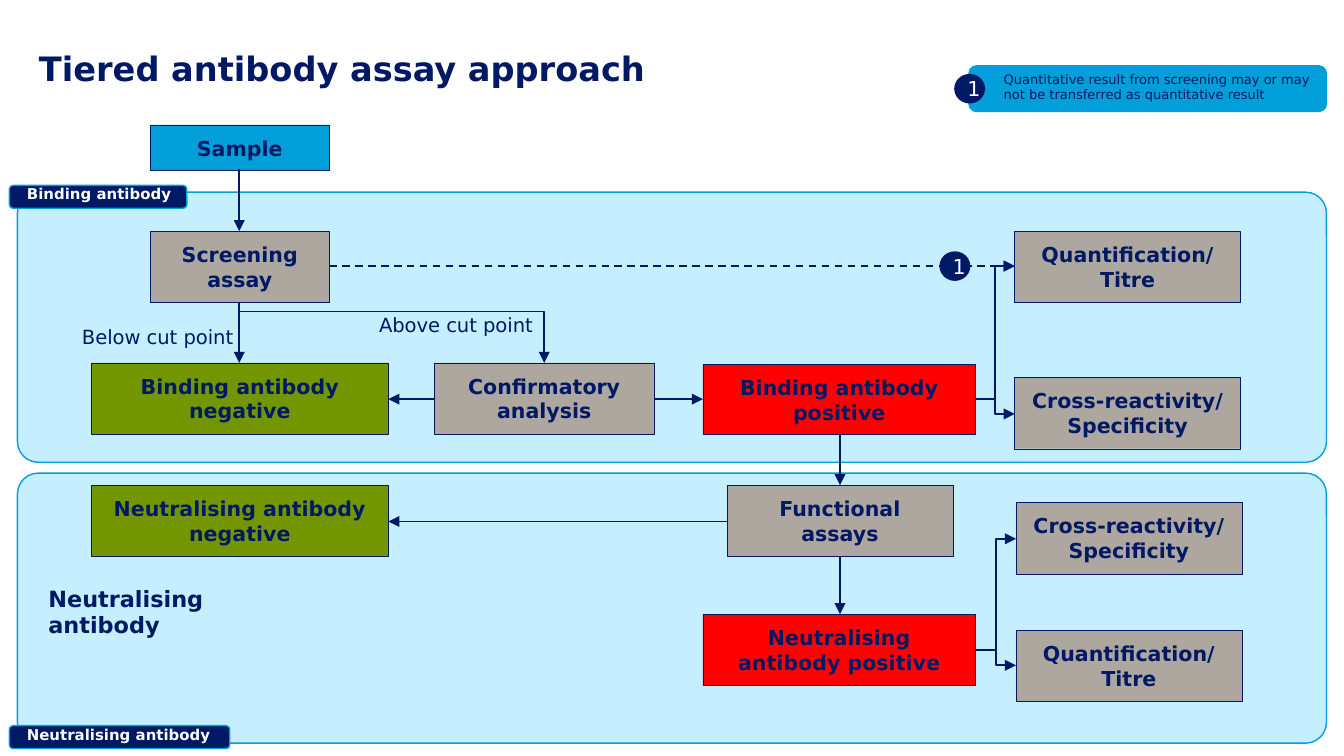
from dataclasses import dataclass

import pptx
import pptx.dml.color
import pptx.enum.dml
import pptx.enum.shapes
import pptx.enum.text
import pptx.oxml
import pptx.oxml.ns
import pptx.util
from pptx.util import Inches

SHAPE = pptx.enum.shapes.MSO_SHAPE
ALIGN = pptx.enum.text.PP_ALIGN
ANCHOR = pptx.enum.text.MSO_ANCHOR


@dataclass(frozen=True)
class Theme:
    font: str = "DejaVu Sans"
    navy: str = "001965"
    blue: str = "009FDA"
    pale: str = "C5EFFF"
    grey: str = "AEA79F"
    green: str = "739600"
    red: str = "FF0000"
    white: str = "FFFFFF"
    title: float = 18
    heading: float = 12
    box: float = 11
    label: float = 10.5
    tag: float = 8
    note: float = 7


THEME = Theme()
BOX_HEIGHT = 0.53
SIDE_WIDTH = 1.68
POSITIVE_WIDTH = 2.03

# text, left, top, width, height, fill
BOXES = [
    ("Sample", 1.12, 0.93, 1.33, 0.34, THEME.blue),
    ("Screening\nassay", 1.12, 1.72, 1.33, BOX_HEIGHT, THEME.grey),
    ("Binding antibody negative", 0.68, 2.7, 2.21, BOX_HEIGHT, THEME.green),
    ("Confirmatory\nanalysis", 3.23, 2.7, 1.64, BOX_HEIGHT, THEME.grey),
    ("Binding antibody positive", 5.23, 2.71, POSITIVE_WIDTH, 0.52, THEME.red),
    ("Quantification/\vTitre", 7.55, 1.72, SIDE_WIDTH, BOX_HEIGHT, THEME.grey),
    ("Cross-reactivity/\nSpecificity", 7.55, 2.81, SIDE_WIDTH, BOX_HEIGHT, THEME.grey),
    ("Neutralising antibody negative", 0.68, 3.61, 2.21, BOX_HEIGHT, THEME.green),
    ("Functional\vassays", 5.41, 3.61, SIDE_WIDTH, BOX_HEIGHT, THEME.grey),
    ("Neutralising antibody positive", 5.23, 4.57, POSITIVE_WIDTH, BOX_HEIGHT, THEME.red),
    ("Cross-reactivity/\nSpecificity", 7.56, 3.74, SIDE_WIDTH, BOX_HEIGHT, THEME.grey),
    ("Quantification/\vTitre", 7.56, 4.69, SIDE_WIDTH, BOX_HEIGHT, THEME.grey),
]

STRAIGHT_ARROWS = [
    (1.78, 1.26, 1.78, 1.72),
    (1.78, 2.25, 1.78, 2.7),
    (3.23, 2.97, 2.89, 2.97),
    (4.87, 2.97, 5.23, 2.97),
    (6.25, 3.23, 6.25, 3.61),
    (6.25, 4.14, 6.25, 4.57),
    (5.41, 3.88, 2.89, 3.88),
]

ELBOW_ARROWS = [
    (7.26, 2.97, 7.55, 3.08),
    (7.26, 2.97, 7.55, 1.98),
    (7.26, 4.84, 7.56, 4.01),
    (7.26, 4.84, 7.56, 4.95),
]


def rgb(value):
    return pptx.dml.color.RGBColor.from_string(value)


def write(shape, text, size, color=THEME.navy, bold=False, align=ALIGN.LEFT,
          anchor=ANCHOR.TOP, inset=None, grow=False):
    frame = shape.text_frame
    frame.word_wrap = True
    frame.vertical_anchor = anchor
    if inset is not None:
        frame.margin_left = frame.margin_right = Inches(inset)
        frame.margin_top = frame.margin_bottom = Inches(inset)
    if grow:
        frame.auto_size = pptx.enum.text.MSO_AUTO_SIZE.SHAPE_TO_FIT_TEXT
    frame.text = text
    for para in frame.paragraphs:
        para.alignment = align
        for span in para.runs:
            span.font.name = THEME.font
            span.font.size = pptx.util.Pt(size)
            span.font.bold = bold
            span.font.color.rgb = rgb(color)


def add_shape(shapes, kind, bounds, fill, line=None, width=0.75, radius=None):
    shape = shapes.add_shape(kind, *map(Inches, bounds))
    shape.shadow.inherit = False
    shape.fill.solid()
    shape.fill.fore_color.rgb = rgb(fill)
    if line:
        shape.line.color.rgb = rgb(line)
        shape.line.width = pptx.util.Pt(width)
    else:
        shape.line.fill.background()
    if radius is not None:
        shape.adjustments[0] = radius
    return shape


def add_label(shapes, text, bounds, size, inset=0.08, **style):
    box = shapes.add_textbox(*map(Inches, bounds))
    write(box, text, size, inset=inset, grow=True, **style)


def add_box(shapes, text, left, top, width, height, fill):
    box = add_shape(shapes, SHAPE.RECTANGLE, (left, top, width, height), fill, THEME.navy, 0.25)
    write(box, text, THEME.box, bold=True, align=ALIGN.CENTER, inset=0.08, grow=True)


def add_marker(shapes, left, top):
    marker = add_shape(shapes, SHAPE.OVAL, (left, top, 0.23, 0.22), THEME.navy)
    write(marker, "1", THEME.box, THEME.white, align=ALIGN.CENTER, anchor=ANCHOR.MIDDLE)


def add_arrow(shapes, points, elbow=False, dashed=False):
    kinds = pptx.enum.shapes.MSO_CONNECTOR
    arrow = shapes.add_connector(kinds.ELBOW if elbow else kinds.STRAIGHT, *map(Inches, points))
    arrow.line.color.rgb = rgb(THEME.navy)
    arrow.line.width = pptx.util.Pt(1)
    if dashed:
        arrow.line.dash_style = pptx.enum.dml.MSO_LINE.DASH
    properties = arrow._element.spPr
    tail = pptx.oxml.parse_xml(f'<a:tailEnd {pptx.oxml.ns.nsdecls("a")} type="triangle"/>')
    properties.find(pptx.oxml.ns.qn("a:ln")).append(tail)
    properties.append(pptx.oxml.parse_xml(f'<a:effectLst {pptx.oxml.ns.nsdecls("a")}/>'))
    return arrow


def add_drop_arrow(shapes, left, top, right, bottom, bend):
    """Elbow that leaves downwards, runs right and ends downwards."""
    center_x, center_y = (left + right) / 2, (top + bottom) / 2
    half_x, half_y = (right - left) / 2, (bottom - top) / 2
    arrow = add_arrow(shapes, (center_x + half_y, center_y - half_x,
                               center_x - half_y, center_y + half_x), elbow=True)
    properties = arrow._element.spPr
    properties.find(pptx.oxml.ns.qn("a:xfrm")).set("rot", str(270 * 60000))
    guides = properties.find(pptx.oxml.ns.qn("a:prstGeom")).get_or_add_avLst()
    guides.append(pptx.oxml.parse_xml(
        f'<a:gd {pptx.oxml.ns.nsdecls("a")} name="adj1" fmla="val {round(bend * 100000)}"/>'))


def add_tag(slide, text, top, width):
    shapes = slide.shapes.add_group_shape().shapes
    add_shape(shapes, SHAPE.ROUNDED_RECTANGLE, (0.07, top, width, 0.17), THEME.navy, THEME.blue)
    add_label(shapes, text, (0.12, top - 0.07, width - 0.04, 0.29), THEME.tag,
              color=THEME.white, bold=True)


def add_note(slide):
    shapes = slide.shapes.add_group_shape().shapes
    add_shape(shapes, SHAPE.ROUNDED_RECTANGLE, (7.21, 0.49, 2.66, 0.34), THEME.blue, THEME.blue)
    add_label(shapes, "Quantitative result from screening may or may not be transferred "
              "as quantitative result", (7.37, 0.48, 2.5, 0.34), THEME.note, inset=None)
    add_marker(shapes, 7.1, 0.55)


def add_title(slide, text):
    title = slide.shapes.title
    title.left, title.top, title.width, title.height = map(Inches, (0.29, 0.28, 7.31, 0.45))
    write(title, text, THEME.title, bold=True, anchor=ANCHOR.MIDDLE, inset=0)


def main():
    deck = pptx.Presentation()
    deck.slide_width = Inches(10)
    deck.slide_height = deck.slide_width * 9 // 16
    slide = deck.slides.add_slide(deck.slide_layouts[5])
    shapes = slide.shapes
    add_title(slide, "Tiered antibody assay approach")
    for top in (3.52, 1.43):
        add_shape(shapes, SHAPE.ROUNDED_RECTANGLE, (0.13, top, 9.74, 2.01),
                  THEME.pale, THEME.blue, radius=0.077)
    for box in BOXES:
        add_box(shapes, *box)
    add_label(shapes, "Above cut point", (2.74, 2.25, 1.31, 0.34), THEME.label)
    add_label(shapes, "Below cut point", (0.53, 2.34, 1.31, 0.34), THEME.label)
    add_label(shapes, "Neutralising antibody", (0.28, 4.27, 1.58, 0.55), THEME.heading, bold=True)
    for points in STRAIGHT_ARROWS:
        add_arrow(shapes, points)
    for points in ELBOW_ARROWS:
        add_arrow(shapes, points, elbow=True)
    add_drop_arrow(shapes, 1.78, 2.25, 4.05, 2.7, bend=0.15)
    add_arrow(shapes, (2.45, 1.98, 7.55, 1.98), dashed=True)
    add_marker(shapes, 6.99, 1.87)
    add_note(slide)
    add_tag(slide, "Binding antibody", 1.38, 1.32)
    add_tag(slide, "Neutralising antibody", 5.4, 1.64)
    deck.save("out.pptx")


if __name__ == "__main__":
    main()
